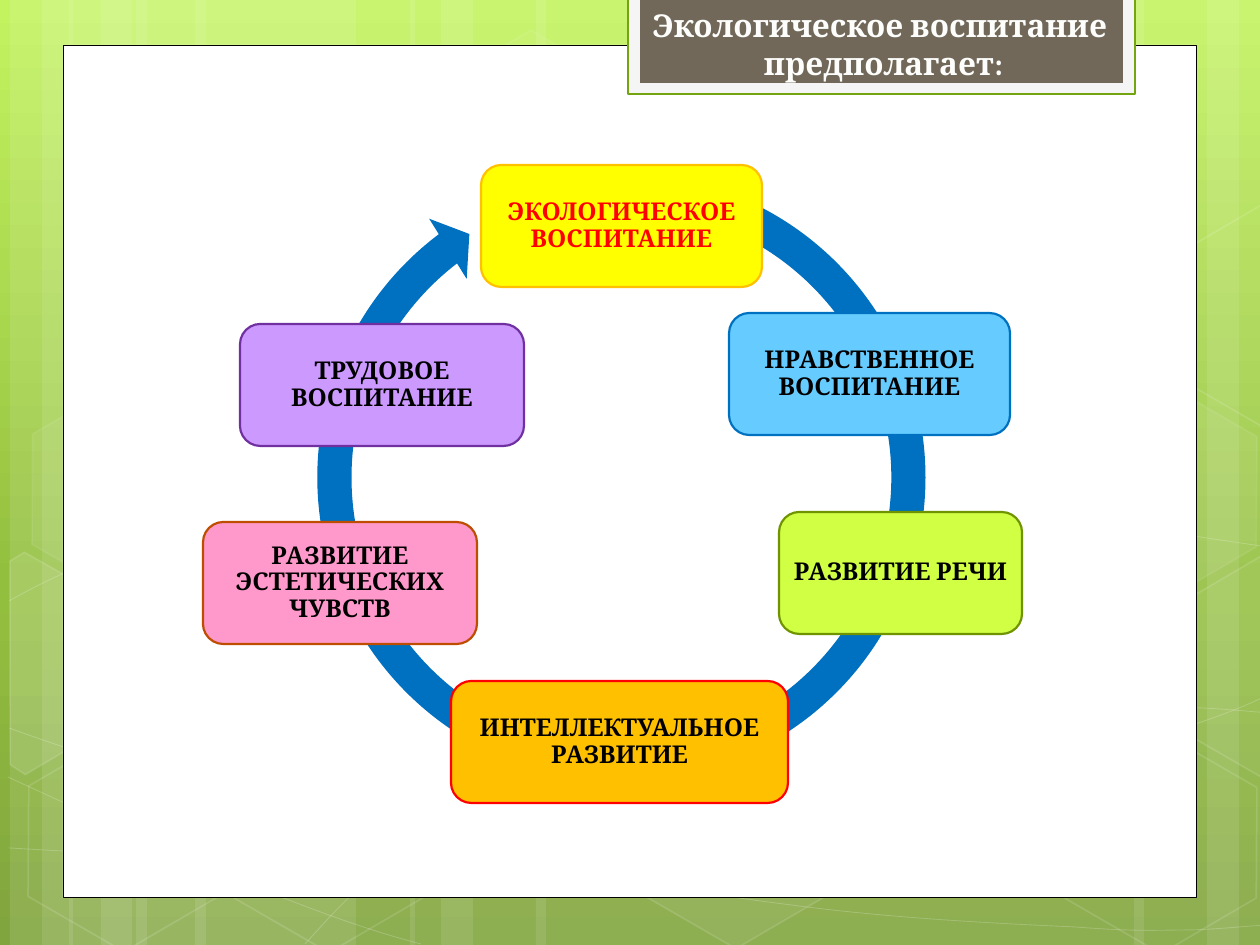
from copy import deepcopy
from math import cos, radians, sin

from lxml.etree import SubElement
from pptx import Presentation
from pptx.dml.color import RGBColor
from pptx.enum.shapes import MSO_SHAPE
from pptx.enum.text import MSO_ANCHOR, PP_ALIGN
from pptx.oxml.ns import qn
from pptx.util import Pt

EMU_PER_PX = 914400 / 126
SLIDE_W, SLIDE_H = 1260, 945
FONT = "Cambria"
TILT = 30

COLORS = {
    "white": "FFFFFF", "black": "000000", "red": "FF0000",
    "sky_top": "C3F35F", "sky_middle": "93BF3F", "sky_bottom": "81A53E",
    "title_rim": "F5F5F5", "title_line": "74A510", "title_fill": "71685A",
    "title_text": "FDFEFC", "blue": "0070C0", "yellow": "FFFF00",
    "amber": "FFC000", "light_blue": "66CCFF", "lime": "D0FF44",
    "olive": "6F9400", "pink": "FF99CC", "rust": "BF4D00",
    "lilac": "CC99FF", "purple": "7030A0",
}

BANDS = [(136, 220), (10, 63), (42, 105), (195, 220), (69, 63), (101, 105),
         (924, 220), (1207, 63), (1134, 105), (536, 388), (410, 63), (441, 105)]

WAVES = [
    [(9, 848), (77, 852), (145, 856), (239, 854), (334, 853), (451, 851), (577, 838),
     (703, 825), (882, 801), (998, 777), (1113, 753), (1231, 716), (1269, 694)],
    [(9, 601), (45, 581), (82, 562), (152, 543), (224, 524), (326, 496), (437, 488),
     (549, 479), (685, 478), (824, 488), (963, 498), (1193, 537), (1269, 547)],
    [(8, 777), (160, 847), (311, 916), (421, 944)],
    [(9, 728), (48, 742), (88, 756), (161, 776), (234, 795), (344, 827), (450, 848),
     (554, 869), (687, 892), (791, 905), (896, 919), (1008, 924), (1075, 927),
     (1140, 932), (1158, 930), (1191, 930), (1223, 929), (1246, 926), (1269, 925)],
    [(305, 944), (328, 919), (350, 893), (381, 871), (411, 848), (454, 823), (489, 805),
     (524, 788), (546, 780), (592, 767), (638, 755), (722, 737), (766, 728),
     (811, 719), (818, 719), (857, 717), (896, 713), (958, 709), (1000, 708),
     (1045, 707), (1116, 708), (1116, 708), (1116, 708), (1201, 708), (1201, 708),
     (1223, 709), (1245, 711), (1256, 712), (1268, 713), (1264, 712), (1268, 713)],
]

HEXAGONS = [(421, 45, 4, 8), (626, 742, 6, 12), (14, 745, 0, 12), (18, 393, 7, 8),
            (219, 746, 0, 12), (949, 571, 10, 12), (1051, 747, 0, 12), (1051, 396, 7, 8)]

LEFT_EDGE = [(10, 561), (24, 552), (121, 607), (120, 718), (25, 774), (10, 765)]
RIGHT_EDGE = [(1167, 611), (1261, 556), (1271, 562), (1271, 772), (1263, 777), (1167, 722)]
UPPER_EDGE = [(x, y - 351) for x, y in RIGHT_EDGE]
CUT_HEXAGONS = [(LEFT_EDGE, (45, 674), 10), (RIGHT_EDGE, (1241, 655), 4),
                (UPPER_EDGE, (1241, 304), 0)]

TOPICS = [
    ("ЭКОЛОГИЧЕСКОЕ ВОСПИТАНИЕ", 278, 10, 281, "yellow", "amber", "red"),
    ("НРАВСТВЕННОЕ ВОСПИТАНИЕ", 526, 158, 281, "light_blue", "blue", "black"),
    ("ИНТЕЛЛЕКТУАЛЬНОЕ РАЗВИТИЕ", 248, 526, 337, "amber", "red", "black"),
    ("РАЗВИТИЕ РЕЧИ", 576, 357, 243, "lime", "olive", "black"),
    ("РАЗВИТИЕ ЭСТЕТИЧЕСКИХ ЧУВСТВ", 0, 367, 274, "pink", "rust", "black"),
    ("ТРУДОВОЕ ВОСПИТАНИЕ", 37, 169, 284, "lilac", "purple", "black"),
]


def px(length):
    return round(length * EMU_PER_PX)


def rgb(name):
    return RGBColor.from_string(COLORS[name])


def set_opacity(shape, part, percent):
    for color in shape.element.xpath(f"./p:spPr/{part}/a:srgbClr"):
        SubElement(color, qn("a:alpha")).set("val", str(percent * 1000))


def style(shape, fill=None, line=None, width=1, fill_opacity=100, line_opacity=100):
    shape.shadow.inherit = False
    if fill:
        shape.fill.solid()
        shape.fill.fore_color.rgb = rgb(fill)
        if fill_opacity < 100:
            set_opacity(shape, "a:solidFill", fill_opacity)
    else:
        shape.fill.background()
    if line:
        shape.line.color.rgb = rgb(line)
        shape.line.width = Pt(width)
        if line_opacity < 100:
            set_opacity(shape, "a:ln/a:solidFill", line_opacity)
    else:
        shape.line.fill.background()
    return shape


def add_preset(slide, preset, box, **look):
    return style(slide.shapes.add_shape(preset, *map(px, box)), **look)


def add_outline(slide, points, closed, **look):
    builder = slide.shapes.build_freeform(*points[0], scale=EMU_PER_PX)
    builder.add_line_segments(points[1:], close=closed)
    return style(builder.convert_to_shape(), **look)


def bend_segments(shape):
    outline = shape.element.xpath(".//a:path")[0]
    segments = outline.findall(qn("a:lnTo"))
    for start in range(0, len(segments), 3):
        curve = SubElement(outline, qn("a:cubicBezTo"))
        for segment in segments[start:start + 3]:
            curve.append(segment[0])
            outline.remove(segment)


def untilt(points, center):
    c, s = cos(radians(TILT)), sin(radians(TILT))
    offsets = [(x - center[0], y - center[1]) for x, y in points]
    return [(round(center[0] + x * c + y * s), round(center[1] - x * s + y * c))
            for x, y in offsets]


def write_text(frame, text, size, color, spacing=1.0, margins=(7, 7, 7, 7),
               anchor=MSO_ANCHOR.MIDDLE):
    frame.word_wrap = True
    frame.vertical_anchor = anchor
    (frame.margin_left, frame.margin_top,
     frame.margin_right, frame.margin_bottom) = map(px, margins)
    for index, line in enumerate(text.split("\n")):
        paragraph = frame.add_paragraph() if index else frame.paragraphs[0]
        paragraph.alignment = PP_ALIGN.CENTER
        paragraph.line_spacing = spacing
        run = paragraph.add_run()
        run.text = line
        run.font.name = FONT
        run.font.size = Pt(size)
        run.font.bold = True
        run.font.color.rgb = rgb(color)


def paint_background(slide):
    fill = slide.background.fill
    fill.gradient()
    fill.gradient_angle = 270
    stop_list = slide.element.xpath(".//a:gsLst")[0]
    stop_list.append(deepcopy(stop_list[-1]))
    shades = [(0, "sky_top"), (0.62, "sky_middle"), (1, "sky_bottom")]
    for stop, (position, name) in zip(fill.gradient_stops, shades):
        stop.position = position
        stop.color.rgb = rgb(name)


def add_backdrop(slide, box):
    left, top, _, height = box
    for x, width in BANDS:
        add_preset(slide, MSO_SHAPE.RECTANGLE, (left + x, top, width, height),
                   fill="white", fill_opacity=10)
    for knots in WAVES:
        points = [(left + x, top + y) for x, y in knots]
        bend_segments(add_outline(slide, points, False, line="white", width=0.5,
                                  line_opacity=20))
    for x, y, fill_opacity, line_opacity in HEXAGONS:
        hexagon = add_preset(slide, MSO_SHAPE.HEXAGON, (left + x, top + y, 220, 192),
                             fill="white" if fill_opacity else None, line="white",
                             fill_opacity=fill_opacity, line_opacity=line_opacity)
        hexagon.rotation = TILT
        hexagon.adjustments[0] = 0.285
    for corners, center, opacity in CUT_HEXAGONS:
        points = [(left + x, top + y) for x, y in untilt(corners, center)]
        cut = add_outline(slide, points, True, fill="white" if opacity else None,
                          line="white", fill_opacity=opacity, line_opacity=12)
        cut.rotation = TILT


def add_title(slide, box):
    left, top, width, height = box
    add_preset(slide, MSO_SHAPE.RECTANGLE, box, fill="title_rim", line="title_line", width=1.25)
    add_preset(slide, MSO_SHAPE.RECTANGLE, (left + 12, top, width - 24, height - 11),
               fill="title_fill")
    title = slide.shapes.add_textbox(*map(px, (left + 12, top + 2, 494, 89)))
    write_text(title.text_frame, "Экологическое воспитание\n предполагает:", 18, "title_text",
               margins=(5, 6, 19, 6), anchor=MSO_ANCHOR.TOP)


def add_cycle(slide, box):
    left, top, _, _ = box
    arrow = add_preset(slide, MSO_SHAPE.CIRCULAR_ARROW, (left + 96, top, 645, 645), fill="blue")
    for index, value in enumerate((0.053, 3.126, 139.687, 172.805, 0.055)):
        arrow.adjustments[index] = value
    for text, x, y, width, fill, line, color in TOPICS:
        topic = add_preset(slide, MSO_SHAPE.ROUNDED_RECTANGLE, (left + x, top + y, width, 122),
                           fill=fill, line=line, width=1.25)
        write_text(topic.text_frame, text, 14, color, spacing=0.9)


def main():
    deck = Presentation()
    deck.slide_width, deck.slide_height = px(SLIDE_W), px(SLIDE_H)
    slide = deck.slides.add_slide(deck.slide_layouts[6])
    paint_background(slide)
    add_backdrop(slide, (0, 0, SLIDE_W, SLIDE_H))
    add_preset(slide, MSO_SHAPE.RECTANGLE, (63, 45, 1134, 853),
               fill="white", line="black", width=0.5)
    add_title(slide, (628, -2, 507, 96))
    add_cycle(slide, (203, 155, 820, 648))
    deck.save("out.pptx")


if __name__ == "__main__":
    main()
